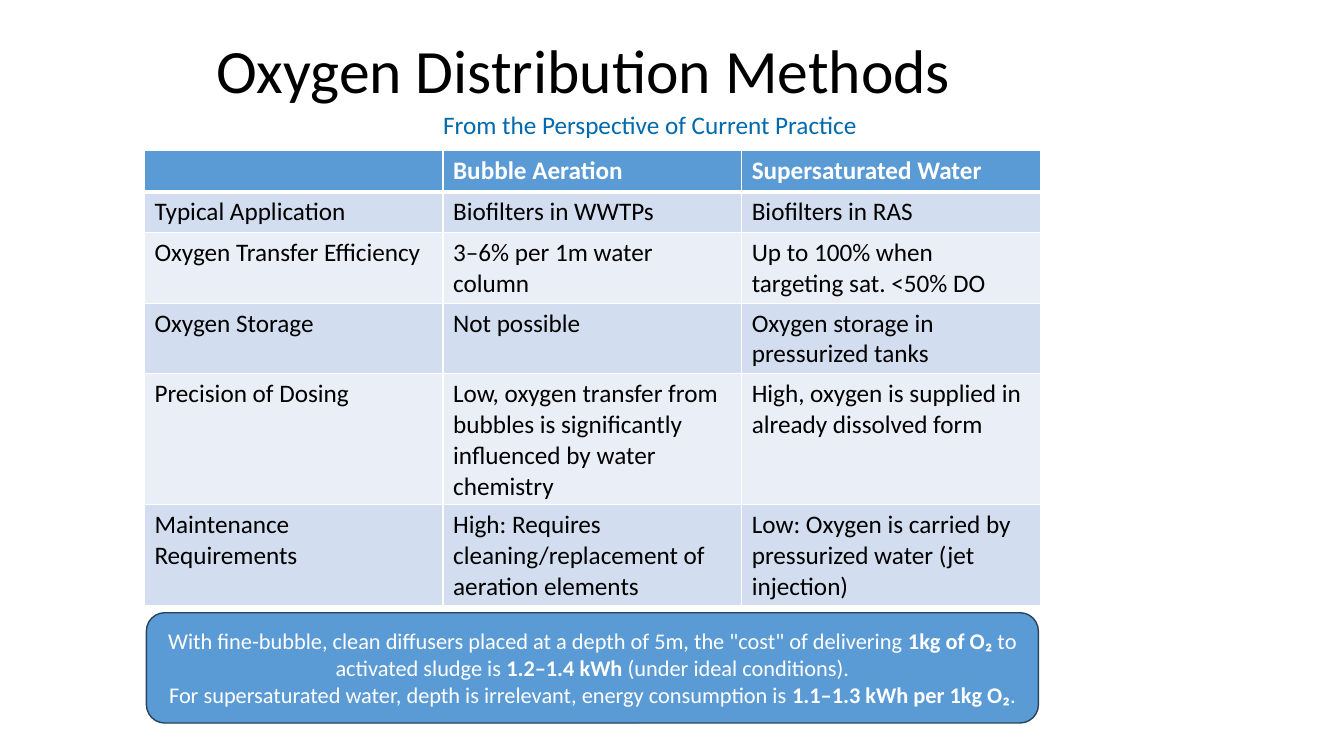
from lxml import etree
from pptx import Presentation
from pptx import util as u
from pptx.dml.color import RGBColor
from pptx.enum import shapes, text
from pptx.oxml import ns

FONT = "Calibri"
BLACK = RGBColor(0x00, 0x00, 0x00)
WHITE = RGBColor(0xFF, 0xFF, 0xFF)
SUBTITLE_BLUE = RGBColor(0x00, 0x6A, 0xAC)
ACCENT_BLUE = RGBColor(0x5B, 0x9B, 0xD5)
OUTLINE_BLUE = RGBColor(0x28, 0x44, 0x5D)
BANDS = (RGBColor(0xD2, 0xDE, 0xEF), RGBColor(0xEA, 0xEF, 0xF7))

TABLE_ROWS = [
    ("", "Bubble Aeration", "Supersaturated Water"),
    ("Typical Application", "Biofilters in WWTPs", "Biofilters in RAS"),
    ("Oxygen Transfer Efficiency", "3–6% per 1m water column",
     "Up to 100% when targeting sat. <50% DO"),
    ("Oxygen Storage", "Not possible", "Oxygen storage in pressurized tanks"),
    ("Precision of Dosing",
     "Low, oxygen transfer from bubbles is significantly influenced by water chemistry",
     "High, oxygen is supplied in already dissolved form"),
    ("Maintenance Requirements",
     "High: Requires cleaning/replacement of aeration elements",
     "Low: Oxygen is carried by pressurized water (jet injection)"),
]

# Each paragraph is a list of (words, bold) runs
ENERGY_NOTE = [
    [("With fine-bubble, clean diffusers placed at a depth of 5m, "
      "the \"cost\" of delivering ", False),
     ("1kg of O₂", True), (" to activated sludge is ", False),
     ("1.2–1.4 kWh", True), (" (under ideal conditions).", False)],
    [("For supersaturated water, depth is irrelevant, energy consumption is ", False),
     ("1.1–1.3 kWh per 1kg O₂", True), (".", False)],
]


def add_run(paragraph, words, size, color, bold=False):
    run = paragraph.add_run()
    run.text = words
    run.font.name = FONT
    run.font.size = u.Pt(size)
    run.font.bold = bold
    run.font.color.rgb = color


def add_title(slide, left, top, width, height):
    title = slide.shapes.title
    title.left, title.top, title.width, title.height = left, top, width, height
    title.text_frame.vertical_anchor = text.MSO_ANCHOR.MIDDLE
    paragraph = title.text_frame.paragraphs[0]
    paragraph.alignment = text.PP_ALIGN.LEFT
    paragraph.line_spacing = 0.9
    add_run(paragraph, "Oxygen Distribution Methods", 44, BLACK)


def add_subtitle(slide, left, top, width, height):
    frame = slide.shapes.add_textbox(left, top, width, height).text_frame
    frame.word_wrap = True
    add_run(frame.paragraphs[0], "From the Perspective of Current Practice", 18, SUBTITLE_BLUE)


def set_borders(cell, bottom_width):
    properties = cell._tc.get_or_add_tcPr()
    for side, width in (("L", 1), ("R", 1), ("T", 1), ("B", bottom_width)):
        line = etree.SubElement(properties, ns.qn(f"a:ln{side}"), w=str(u.Pt(width)))
        fill = etree.SubElement(line, ns.qn("a:solidFill"))
        etree.SubElement(fill, ns.qn("a:srgbClr"), val=str(WHITE))


def add_comparison_table(slide, left, top, width, row_height):
    row_count, column_count = len(TABLE_ROWS), len(TABLE_ROWS[0])
    table = slide.shapes.add_table(
        row_count, column_count, left, top, width, row_height * row_count).table
    for row_index, row in enumerate(TABLE_ROWS):
        header = row_index == 0
        for column_index, words in enumerate(row):
            cell = table.cell(row_index, column_index)
            set_borders(cell, 3 if header else 1)
            cell.fill.solid()
            cell.fill.fore_color.rgb = ACCENT_BLUE if header else BANDS[(row_index - 1) % 2]
            if words:
                add_run(cell.text_frame.paragraphs[0], words, 18,
                        WHITE if header else BLACK, header)


def add_energy_note(slide, left, top, width, height):
    note = slide.shapes.add_shape(
        shapes.MSO_SHAPE.ROUNDED_RECTANGLE, left, top, width, height)
    note.shadow.inherit = False
    note.fill.solid()
    note.fill.fore_color.rgb = ACCENT_BLUE
    note.line.color.rgb = OUTLINE_BLUE
    note.line.width = u.Pt(1)
    frame = note.text_frame
    frame.word_wrap = True
    frame.vertical_anchor = text.MSO_ANCHOR.MIDDLE
    for index, runs in enumerate(ENERGY_NOTE):
        paragraph = frame.add_paragraph() if index else frame.paragraphs[0]
        paragraph.alignment = text.PP_ALIGN.CENTER
        for words, bold in runs:
            add_run(paragraph, words, 16, WHITE, bold)


def main():
    presentation = Presentation()
    presentation.slide_width = u.Cm(33.87)
    presentation.slide_height = u.Cm(19.05)
    slide = presentation.slides.add_slide(presentation.slide_layouts[5])

    # Heading
    add_title(slide, u.Cm(5.2), u.Cm(0.6), u.Cm(28.32), u.Cm(2.52))
    add_subtitle(slide, u.Cm(10.92), u.Cm(2.62), u.Cm(17), u.Cm(1.02))

    # Comparison and energy summary
    add_comparison_table(slide, u.Cm(3.64), u.Cm(3.8), u.Cm(22.58), u.Cm(1.03))
    add_energy_note(slide, u.Cm(3.69), u.Cm(15.44), u.Cm(22.48), u.Cm(2.78))

    presentation.save("out.pptx")


if __name__ == "__main__":
    main()
